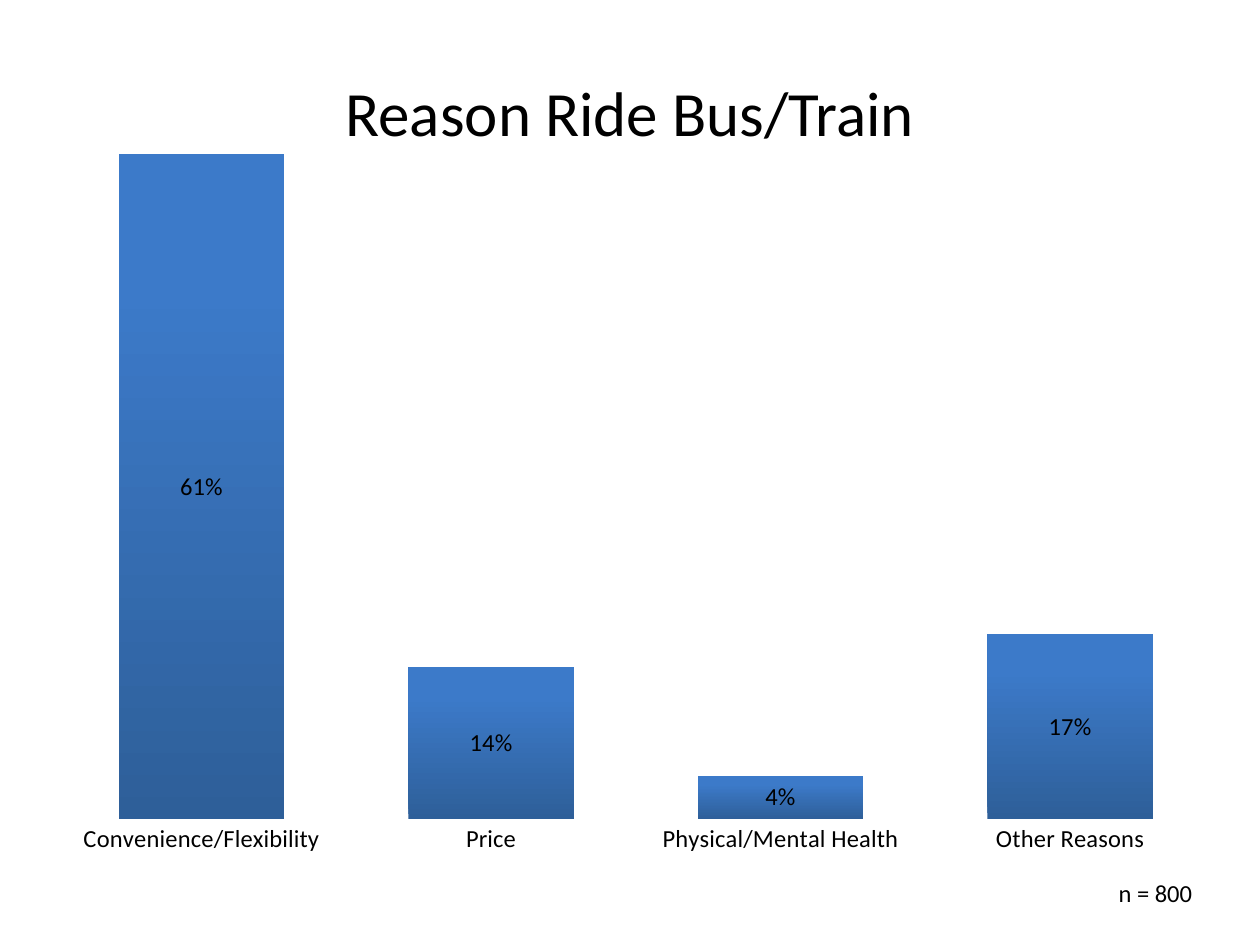
"""Build a slide with a column chart of the reasons for riding bus or train."""
from lxml.etree import SubElement as Sub
from pptx import Presentation
from pptx.chart.data import CategoryChartData as Data
from pptx.dml.color import RGBColor as Rgb
from pptx.enum.chart import XL_CHART_TYPE as Kind
from pptx.enum.chart import XL_LABEL_POSITION as Spot
from pptx.enum.chart import XL_TICK_MARK as Tick
from pptx.enum.text import MSO_ANCHOR as Anchor
from pptx.enum.text import PP_ALIGN as Align
from pptx.oxml.ns import qn
from pptx.util import Pt

SCALE = 914400 / 126
FONT = "Calibri"
HUES = {"ink": "000000", "low": "2E5F99", "high": "3C7AC9"}
VOTES = {
    "Convenience/Flexibility": 0.61,
    "Price": 0.14,
    "Physical/Mental Health": 0.04,
    "Other Reasons": 0.17,
}


def px(*sizes):
    return [round(size * SCALE) for size in sizes]


def hue(name):
    return Rgb.from_string(HUES[name])


def style(font, size, color="ink"):
    font.name = FONT
    font.size = Pt(size)
    font.bold = False
    font.color.rgb = hue(color)


def add_text(slide, box, text, size=14, color="ink", align=Align.CENTER):
    frame = slide.shapes.add_textbox(*px(*box)).text_frame
    frame.word_wrap = True
    frame.vertical_anchor = Anchor.MIDDLE
    para = frame.paragraphs[0]
    para.alignment = align
    run = para.add_run()
    run.text = text
    style(run.font, size, color)


def set_plot(chart, **sides):
    area = chart._chartSpace.chart.plotArea
    for old in area.findall(qn("c:layout")):
        area.remove(old)
    layout = area.makeelement(qn("c:layout"))
    area.insert(0, layout)
    manual = Sub(layout, qn("c:manualLayout"))
    marks = {"layoutTarget": "inner", "xMode": "edge", "yMode": "edge", **sides}
    for tag, val in marks.items():
        Sub(manual, qn(f"c:{tag}")).set("val", str(val))


def shade(fill):
    fill.gradient()
    fill.gradient_angle = 90
    for stop, name, place in zip(fill.gradient_stops, ("low", "high"), (0, 0.8)):
        stop.color.rgb = hue(name)
        stop.position = place


def set_axes(chart):
    cats, vals = chart.category_axis, chart.value_axis
    cats.major_tick_mark = cats.minor_tick_mark = Tick.NONE
    cats.has_major_gridlines = vals.has_major_gridlines = False
    cats.format.line.fill.background()
    style(cats.tick_labels.font, 14)
    vals.minimum_scale, vals.maximum_scale = 0, 0.7
    vals.visible = False


def add_columns(slide, box, votes):
    data = Data(number_format="0%")
    data.categories = list(votes)
    data.add_series("Series 1", list(votes.values()))
    chart = slide.shapes.add_chart(Kind.COLUMN_CLUSTERED, *px(*box), data).chart
    chart.has_title = chart.has_legend = False
    style(chart.font, 10)
    set_axes(chart)
    set_plot(chart, x=0.02, y=0.02, w=0.97, h=0.88)
    plot = chart.plots[0]
    plot.gap_width = 75
    plot.vary_by_categories = False
    shade(plot.series[0].format.fill)
    plot.has_data_labels = True
    labels = plot.data_labels
    labels.show_value = True
    labels.position = Spot.CENTER
    labels.number_format = "0%"
    labels.number_format_is_linked = False
    style(labels.font, 14)


def main():
    deck = Presentation()
    deck.slide_width, deck.slide_height = px(1260, 945)
    slide = deck.slides.add_slide(deck.slide_layouts[6])
    add_text(slide, (63, 32, 1134, 158), "Reason Ride Bus/Train", size=36)
    add_text(slide, (1061, 851, 189, 84), "n = 800")
    add_columns(slide, (33, 39, 1194, 867), VOTES)
    deck.save("out.pptx")


if __name__ == "__main__":
    main()
